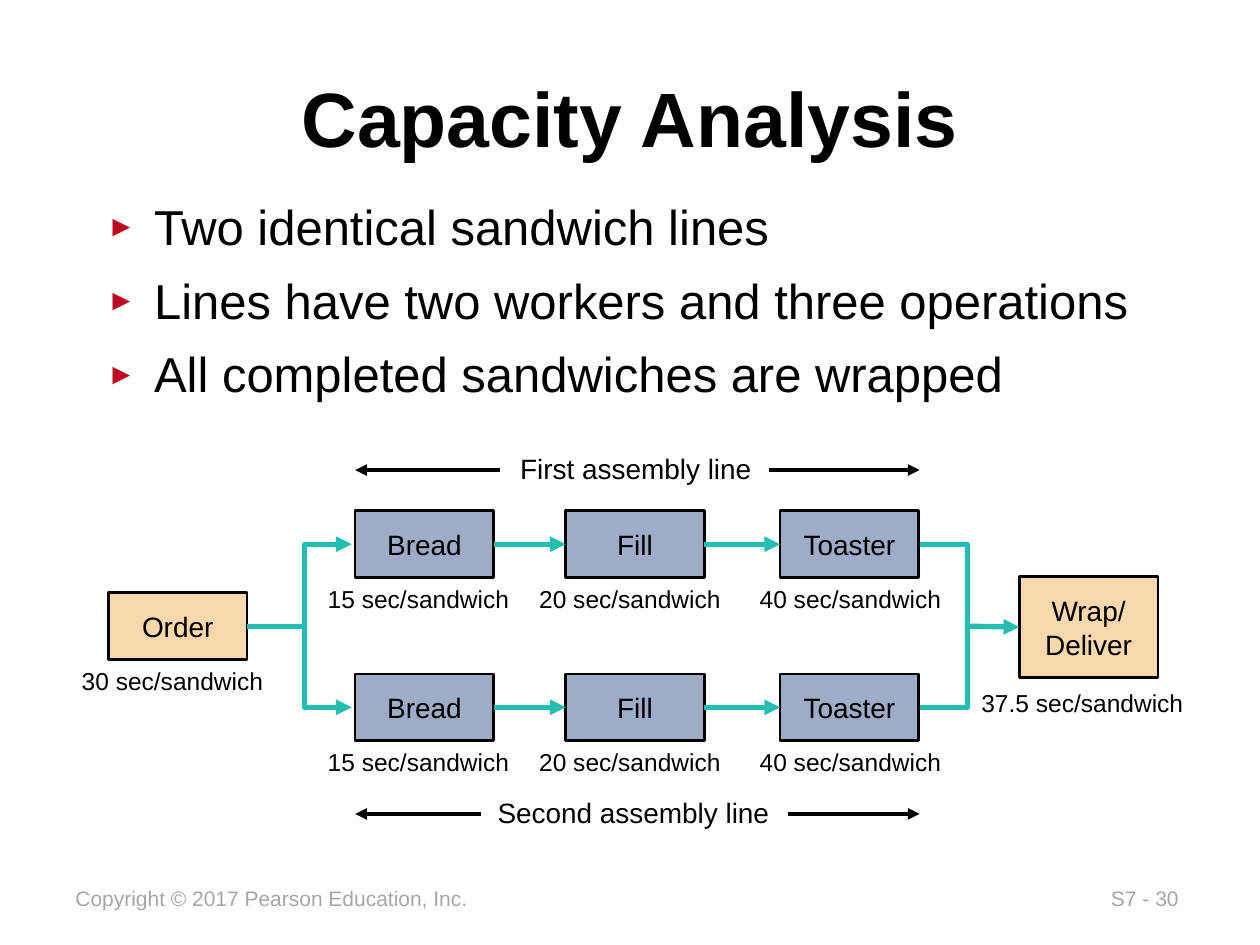
from dataclasses import dataclass

from lxml import etree
from pptx import Presentation
from pptx import util as u
from pptx.dml.color import RGBColor
from pptx.enum import shapes, text
from pptx.oxml.ns import qn

Pt = u.Pt


@dataclass(frozen=True)
class Theme:
    font: str = "Arial"
    ink: str = "000000"
    muted: str = "A6A6A6"
    bullet: str = "BF0922"
    flow: str = "24BDB2"
    station: str = "9FACC7"
    endpoint: str = "F7D7AC"
    title_size: int = 44
    body_size: int = 28
    box_size: int = 16
    time_size: int = 14
    footer_size: int = 12


THEME = Theme()
BOX_WIDTH, BOX_HEIGHT = 79.2, 38.2
LINE_LEFT, LINE_RIGHT = 203, 525.5
SPINE_Y = 357.8
ROWS = (311, 404.2)
# Station name, box left, time, time label left
STATIONS = (
    ("Bread", 203, "15 sec/sandwich", 180.2),
    ("Fill", 323.3, "20 sec/sandwich", 301),
    ("Toaster", 445.8, "40 sec/sandwich", 427),
)


def rgb(color):
    return RGBColor.from_string(color)


def add_run(paragraph, words, size, color=THEME.ink, bold=False):
    run = paragraph.add_run()
    run.text = words
    run.font.name = THEME.font
    run.font.size = Pt(size)
    run.font.bold = bold
    run.font.color.rgb = rgb(color)


def add_label(slide, words, left, top, width, height, size, color=THEME.ink):
    label = slide.shapes.add_textbox(Pt(left), Pt(top), Pt(width), Pt(height))
    label.text_frame.word_wrap = False
    label.text_frame.auto_size = text.MSO_AUTO_SIZE.SHAPE_TO_FIT_TEXT
    add_run(label.text_frame.paragraphs[0], words, size, color)


def add_title(slide, words):
    title = slide.shapes.add_textbox(Pt(36), Pt(21.6), Pt(648), Pt(90))
    frame = title.text_frame
    frame.word_wrap = True
    frame.vertical_anchor = text.MSO_ANCHOR.MIDDLE
    frame.paragraphs[0].alignment = text.PP_ALIGN.CENTER
    add_run(frame.paragraphs[0], words, THEME.title_size, bold=True)


def add_bullet(paragraph):
    properties = paragraph._p.get_or_add_pPr()
    properties.set("marL", str(Pt(27)))
    properties.set("indent", str(-Pt(27)))
    color = etree.SubElement(properties, qn("a:buClr"))
    etree.SubElement(color, qn("a:srgbClr"), val=THEME.bullet)
    etree.SubElement(properties, qn("a:buSzPct"), val="60000")
    etree.SubElement(properties, qn("a:buFont"), typeface=THEME.font)
    etree.SubElement(properties, qn("a:buChar"), char="►")


def add_bullets(slide, items):
    body = slide.shapes.add_textbox(Pt(54), Pt(112.3), Pt(612), Pt(116.6))
    frame = body.text_frame
    frame.word_wrap = True
    for index, item in enumerate(items):
        paragraph = frame.add_paragraph() if index else frame.paragraphs[0]
        add_bullet(paragraph)
        paragraph.line_spacing = 0.9
        paragraph.space_after = Pt(12)
        add_run(paragraph, item, THEME.body_size)


def add_box(slide, lines, left, middle, fill, height=BOX_HEIGHT):
    box = slide.shapes.add_shape(
        shapes.MSO_SHAPE.RECTANGLE,
        Pt(left), Pt(middle - height / 2), Pt(BOX_WIDTH), Pt(height))
    box.shadow.inherit = False
    box.fill.solid()
    box.fill.fore_color.rgb = rgb(fill)
    box.line.color.rgb = rgb(THEME.ink)
    box.line.width = Pt(1.5)
    frame = box.text_frame
    frame.word_wrap = False
    frame.vertical_anchor = text.MSO_ANCHOR.MIDDLE
    frame.margin_left = frame.margin_right = Pt(13)
    frame.margin_top = frame.margin_bottom = Pt(9.4)
    for index, line in enumerate(lines):
        paragraph = frame.add_paragraph() if index else frame.paragraphs[0]
        paragraph.alignment = text.PP_ALIGN.CENTER
        add_run(paragraph, line, THEME.box_size)
    return box


def style_line(shape, color, width, ends=()):
    shape.line.color.rgb = rgb(color)
    shape.line.width = Pt(width)
    for end in ends:
        etree.SubElement(shape.line._get_or_add_ln(), qn(f"a:{end}"), type="triangle")


def add_line(slide, start, end, color=THEME.flow, width=3, arrow=True,
             source=None, target=None):
    line = slide.shapes.add_connector(
        shapes.MSO_CONNECTOR.STRAIGHT, *(Pt(value) for value in start + end))
    style_line(line, color, width, ("tailEnd",) if arrow else ())
    etree.SubElement(line._element.spPr, qn("a:effectLst"))
    if source is not None:
        line.begin_connect(source, 3)
    if target is not None:
        line.end_connect(target, 1)


def add_bracket(slide, open_x, spine_x, ends=()):
    """Draw a three-sided path joining both assembly lines at spine_x."""
    top, bottom = ROWS
    builder = slide.shapes.build_freeform(Pt(open_x), Pt(top))
    builder.add_line_segments(
        [(Pt(x), Pt(y)) for x, y in
         ((spine_x, top), (spine_x, bottom), (open_x, bottom))], close=False)
    bracket = builder.convert_to_shape()
    bracket.shadow.inherit = False
    bracket.fill.background()
    style_line(bracket, THEME.flow, 3, ends)


def add_assembly_line(slide, middle):
    previous = None
    for name, left, time, time_left in STATIONS:
        box = add_box(slide, [name], left, middle, THEME.station)
        add_label(slide, time, time_left, middle + 19.4, 118.8, 24.2, THEME.time_size)
        if previous is not None:
            add_line(slide, (left - 40, middle), (left, middle),
                     source=previous, target=box)
        previous = box


def add_span(slide, words, left, width, middle, gap_left, gap_right):
    add_label(slide, words, left, middle - 14.2, width, 26.6, THEME.box_size)
    for start, end in ((gap_left, LINE_LEFT), (gap_right, LINE_RIGHT)):
        add_line(slide, (start, middle), (end, middle), THEME.ink, 2.25)


def main():
    presentation = Presentation()
    presentation.slide_width, presentation.slide_height = Pt(720), Pt(540)
    slide = presentation.slides.add_slide(presentation.slide_layouts[6])

    # Footer, title and bullets
    add_label(slide, "S7 - 30", 627.8, 502.6, 54.7, 21.6,
              THEME.footer_size, THEME.muted)
    add_label(slide, "Copyright © 2017 Pearson Education, Inc.", 36, 502.6, 241.2, 21.6,
              THEME.footer_size, THEME.muted)
    add_title(slide, "Capacity Analysis")
    add_bullets(slide, ("Two identical sandwich lines",
                        "Lines have two workers and three operations",
                        "All completed sandwiches are wrapped"))

    # Split after ordering, merge before wrapping
    add_bracket(slide, 201, 174.2, ("headEnd", "tailEnd"))
    add_bracket(slide, LINE_RIGHT, 553)
    order = add_box(slide, ["Order"], 62, SPINE_Y, THEME.endpoint)
    wrap = add_box(slide, ["Wrap/", "Deliver"], 582.5, SPINE_Y + 0.6, THEME.endpoint, 57.6)
    add_line(slide, (141.2, SPINE_Y), (173, SPINE_Y), arrow=False, source=order)
    add_line(slide, (553.5, SPINE_Y), (582.5, SPINE_Y), target=wrap)
    add_label(slide, "30 sec/sandwich", 39.6, 376.8, 118.8, 24.2, THEME.time_size)
    add_label(slide, "37.5 sec/sandwich", 553.7, 389.6, 131, 24.2, THEME.time_size)

    # Two identical assembly lines
    for middle in ROWS:
        add_assembly_line(slide, middle)
    add_span(slide, "First assembly line", 290.2, 148.3, 268.6, 285.8, 439.2)
    add_span(slide, "Second assembly line", 277.2, 171.4, 465.1, 275, 450)

    presentation.save("out.pptx")


if __name__ == "__main__":
    main()
